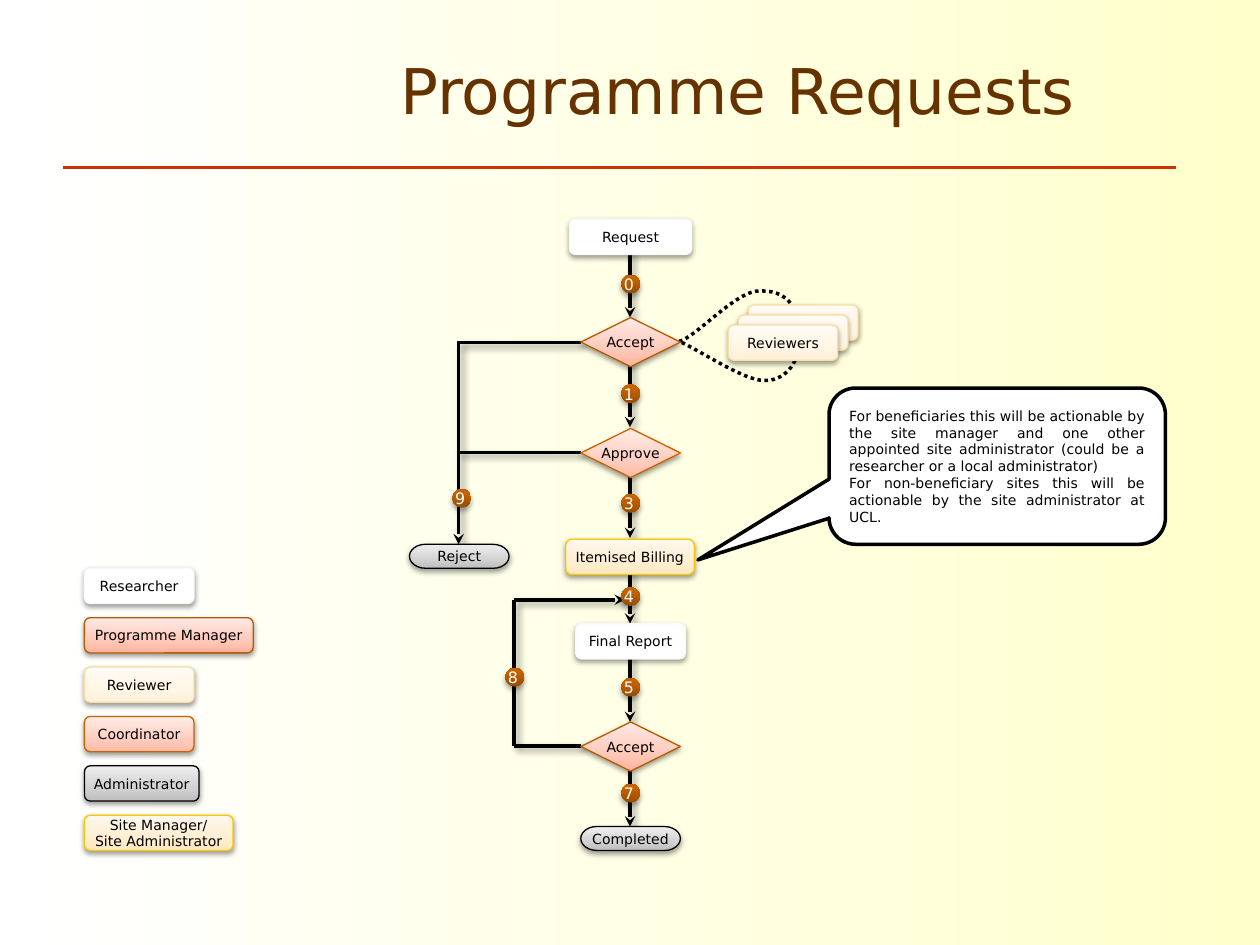
from copy import deepcopy
from dataclasses import dataclass
from typing import Any, Optional

from lxml.etree import SubElement
from pptx import Presentation
from pptx.dml.color import RGBColor
from pptx.enum.dml import MSO_LINE_DASH_STYLE as DASH
from pptx.enum.shapes import MSO_CONNECTOR, MSO_SHAPE as SHAPE
from pptx.enum.text import MSO_ANCHOR as ANCHOR, PP_ALIGN as ALIGN
from pptx.oxml.ns import qn
from pptx.util import Inches, Pt

FONT = "DejaVu Sans"
COLS, ROWS = 100, 75
BLACK, WHITE = "000000", "FFFFFF"
SPINE, LOOP, REJECT = 50, 40.8, 36.4
BOX_H, BOX_W = 2.8, 8.7


@dataclass(frozen=True)
class Shadow:
    alpha: int
    blur: float
    dist: float
    angle: int


@dataclass(frozen=True)
class Style:
    stops: tuple
    line: Optional[str]
    shadow: Optional[Shadow]
    width: float = 0.75


@dataclass(frozen=True)
class Node:
    text: str
    style: Style
    left: float
    top: float
    w: float = BOX_W
    h: float = BOX_H
    form: Any = SHAPE.FLOWCHART_ALTERNATE_PROCESS


@dataclass(frozen=True)
class Link:
    x1: float
    y1: float
    x2: float
    y2: float
    arrow: bool = True


SOFT, LINE_SHADOW = Shadow(38, 3.1, 1.6, 90), Shadow(40, 4, 3, 45)
RESEARCHER = Style(((0, WHITE),), "F9F9F9", SOFT)
MANAGER = Style(((0, "FFB39D"), (35, "FFC9BA"), (100, "FFEAE5")), "B55A00", SOFT)
REVIEWER = Style(((0, "FFF1DA"), (35, "FFF5E4"), (100, "FFFBF5")), "FBDEA4", SOFT)
COORDINATOR = Style(((0, "FFB9A5"), (35, "FFCDBF"), (100, "FFECE7")), "C86400", SOFT)
ADMIN = Style(((0, "BDBDBD"), (35, "D1D1D1"), (100, "EEEEEE")), BLACK, SOFT)
SITE = Style(((0, "FFE7BD"), (35, "FFEED1"), (100, "FFF8EE")), "F9C800", SOFT)
BADGE = Style(((0, "984C00"), (80, "C66300"), (100, "C76300")), None,
              Shadow(35, 3.1, 1.8, 90))
NOTE = Style(((0, WHITE),), BLACK, None, 2)

LEGEND = [("Researcher", RESEARCHER, BOX_W), ("Programme Manager", MANAGER, 13.4),
          ("Reviewer", REVIEWER, BOX_W), ("Coordinator", COORDINATOR, BOX_W),
          ("Administrator", ADMIN, 9.1),
          ("Site Manager/\nSite Administrator", SITE, 11.8)]
LEGEND_LEFT, LEGEND_TOP, LEGEND_STEP = 6.7, 45.1, 3.92

DIAMOND = (46.1, 7.9, 3.9, SHAPE.FLOWCHART_DECISION)
PILL = (7.9, 1.9, SHAPE.FLOWCHART_TERMINATOR)


def decision(text: str, style: Style, top: float) -> Node:
    left, w, h, form = DIAMOND
    return Node(text, style, left, top, w, h, form)


NODES = [
    *[Node(t, REVIEWER, 59.4 - 0.8 * i, 24.2 + 0.8 * i)
      for i, t in enumerate(["", "", "Reviewers"])],
    *[Node(t, st, LEGEND_LEFT, LEGEND_TOP + LEGEND_STEP * i, w)
      for i, (t, st, w) in enumerate(LEGEND)],
    Node("Request", RESEARCHER, 45.2, 17.4, 9.7),
    decision("Accept", MANAGER, 25.2),
    decision("Approve", COORDINATOR, 34),
    Node("Itemised Billing", SITE, 44.9, 42.8, 10.2),
    Node("Final Report", RESEARCHER, 45.7, 49.5),
    decision("Accept", MANAGER, 57.3),
    Node("Reject", ADMIN, 32.5, 43.2, *PILL),
    Node("Completed", ADMIN, 46.1, 65.6, *PILL),
]
LINKS = [
    *[Link(SPINE, y1, SPINE, y2) for y1, y2 in
      [(19.4, 25.2), (28.1, 33.9), (37.8, 42.7), (45.1, 49.5), (51.5, 57.3), (61.2, 65.6)]],
    Link(REJECT, 27.1, REJECT, 43.2),
    Link(REJECT, 27.2, 46.1, 27.2, False),
    Link(REJECT, 35.9, 46.1, 35.9, False),
    Link(LOOP, 59.2, LOOP, 47.6, False),
    Link(LOOP, 47.6, 49.6, 47.6),
    Link(LOOP, 59.2, 46.1, 59.2, False),
]
BADGE_SIZE = 1.5
BADGES = [("0", 49.3, 21.8), ("1", 49.3, 30.5), ("3", 49.3, 39.2), ("4", 49.3, 46.6),
          ("5", 49.3, 53.8), ("7", 49.3, 62.2), ("8", 40.1, 53), ("9", 35.9, 38.8)]
REVIEW_LOOP = [(53.9, 27.1), (55.2, 26.8), (58.5, 23), (60.3, 23.1),
               (63.3, 23), (63.5, 25.6), (63.4, 27.2),
               (63.4, 28.9), (62.2, 30.3), (60.6, 30.2),
               (59, 30.2), (55.2, 27.6), (53.9, 27.1)]
NOTE_TEXT = ("For beneficiaries this will be actionable by the site manager and one other "
             "appointed site administrator (could be a researcher or a local administrator)\n"
             "For non-beneficiary sites this will be actionable by the site administrator at UCL.")

prs = Presentation()
prs.slide_width, prs.slide_height = Inches(10), Inches(7.5)
s = prs.slides.add_slide(prs.slide_layouts[6])


def cells(*values: float) -> list:
    units = (prs.slide_width / COLS, prs.slide_height / ROWS)
    return [round(v * units[i % 2]) for i, v in enumerate(values)]


def rgb(value: str) -> RGBColor:
    return RGBColor.from_string(value)


def assign(obj: Any, values: dict) -> None:
    for name, value in values.items():
        setattr(obj, name, value)


def paint(fill: Any, root: Any, stops: tuple, angle: int = 90) -> None:
    if len(stops) == 1:
        fill.solid()
        fill.fore_color.rgb = rgb(stops[0][1])
        return
    fill.gradient()
    fill.gradient_angle = angle
    gs = root.find(".//" + qn("a:gsLst"))
    while len(gs) < len(stops):
        gs.append(deepcopy(gs[0]))
    for stop, (pos, color) in zip(fill.gradient_stops, stops):
        stop.position = pos / 100
        stop.color.rgb = rgb(color)


def stroke(line: Any, color: str, width: float, arrow: bool = False) -> None:
    line.color.rgb = rgb(color)
    line.width = Pt(width)
    if arrow:
        ln = line._get_or_add_ln()
        SubElement(ln, qn("a:tailEnd"), type="stealth", w="med", len="med")


def cast(effects: Any, sh: Optional[Shadow]) -> None:
    if sh:
        outer = SubElement(effects, qn("a:outerShdw"), blurRad=str(Pt(sh.blur)),
                           dist=str(Pt(sh.dist)), dir=str(sh.angle * 60000),
                           rotWithShape="0")
        color = SubElement(outer, qn("a:srgbClr"), val=BLACK)
        SubElement(color, qn("a:alpha"), val=str(sh.alpha * 1000))


def write(sp: Any, text: str, size: float, color: str, align: Any, frame: dict) -> None:
    tf = sp.text_frame
    assign(tf, {"vertical_anchor": ANCHOR.MIDDLE, **frame})
    for i, line in enumerate(text.split("\n")):
        p = tf.add_paragraph() if i else tf.paragraphs[0]
        p.alignment = align
        r = p.add_run()
        r.text = line
        assign(r.font, {"name": FONT, "size": Pt(size)})
        r.font.color.rgb = rgb(color)


def add_link(link: Link, color: str = BLACK, width: float = 2,
             shadow: Optional[Shadow] = LINE_SHADOW) -> None:
    c = s.shapes.add_connector(MSO_CONNECTOR.STRAIGHT,
                               *cells(link.x1, link.y1, link.x2, link.y2))
    stroke(c.line, color, width, link.arrow)
    cast(SubElement(c._element.spPr, qn("a:effectLst")), shadow)


def add_node(n: Node, size: float = 8, color: str = BLACK, align: Any = ALIGN.CENTER,
             frame: Optional[dict] = None) -> Any:
    sp = s.shapes.add_shape(n.form, *cells(n.left, n.top, n.w, n.h))
    paint(sp.fill, sp._element.spPr, n.style.stops)
    if n.style.line:
        stroke(sp.line, n.style.line, n.style.width)
    else:
        sp.line.fill.background()
    sp.shadow.inherit = False
    cast(sp._element.spPr.find(qn("a:effectLst")), n.style.shadow)
    if n.text:
        write(sp, n.text, size, color, align, frame or {"word_wrap": False})
    return sp


def add_curve(points: list) -> None:
    start, *rest = [tuple(cells(*pt)) for pt in points]
    fb = s.shapes.build_freeform(*start)
    fb.add_line_segments(rest, close=False)
    sp = fb.convert_to_shape()
    track = sp._element.spPr.find(".//" + qn("a:path"))
    segments = track.findall(qn("a:lnTo"))
    for i in range(0, len(segments), 3):
        bezier = SubElement(track, qn("a:cubicBezTo"))
        for seg in segments[i:i + 3]:
            bezier.append(seg[0])
            track.remove(seg)
    sp.fill.background()
    sp.line.dash_style = DASH.ROUND_DOT
    stroke(sp.line, BLACK, 2, True)
    sp.shadow.inherit = False


def main() -> None:
    paint(s.background.fill, s._element, ((0, WHITE), (100, "FFFFCC")), 0)
    add_link(Link(5, 13.3, 93.3, 13.3, False), "CC3300", 1.5, None)
    title = s.shapes.add_textbox(*cells(30.8, 1.7, 64.2, 10.8))
    write(title, "Programme Requests", 36, "663300", ALIGN.LEFT, {"word_wrap": True})
    for link in LINKS:
        add_link(link)
    add_curve(REVIEW_LOOP)
    for node in NODES:
        add_node(node)
    flush = {"word_wrap": True, "margin_left": 0, "margin_right": 0,
             "margin_top": 0, "margin_bottom": 0}
    for text, left, top in BADGES:
        add_node(Node(text, BADGE, left, top, BADGE_SIZE, BADGE_SIZE,
                      SHAPE.FLOWCHART_CONNECTOR), 9, WHITE, ALIGN.JUSTIFY, flush)
    note = add_node(Node(NOTE_TEXT, NOTE, 65.8, 30.8, 26.7, 12.4,
                         SHAPE.ROUNDED_RECTANGULAR_CALLOUT),
                    align=ALIGN.JUSTIFY, frame={"word_wrap": True})
    for i, value in enumerate([-0.89, 0.6, 0.17]):
        note.adjustments[i] = value
    prs.save("out.pptx")


if __name__ == "__main__":
    main()
